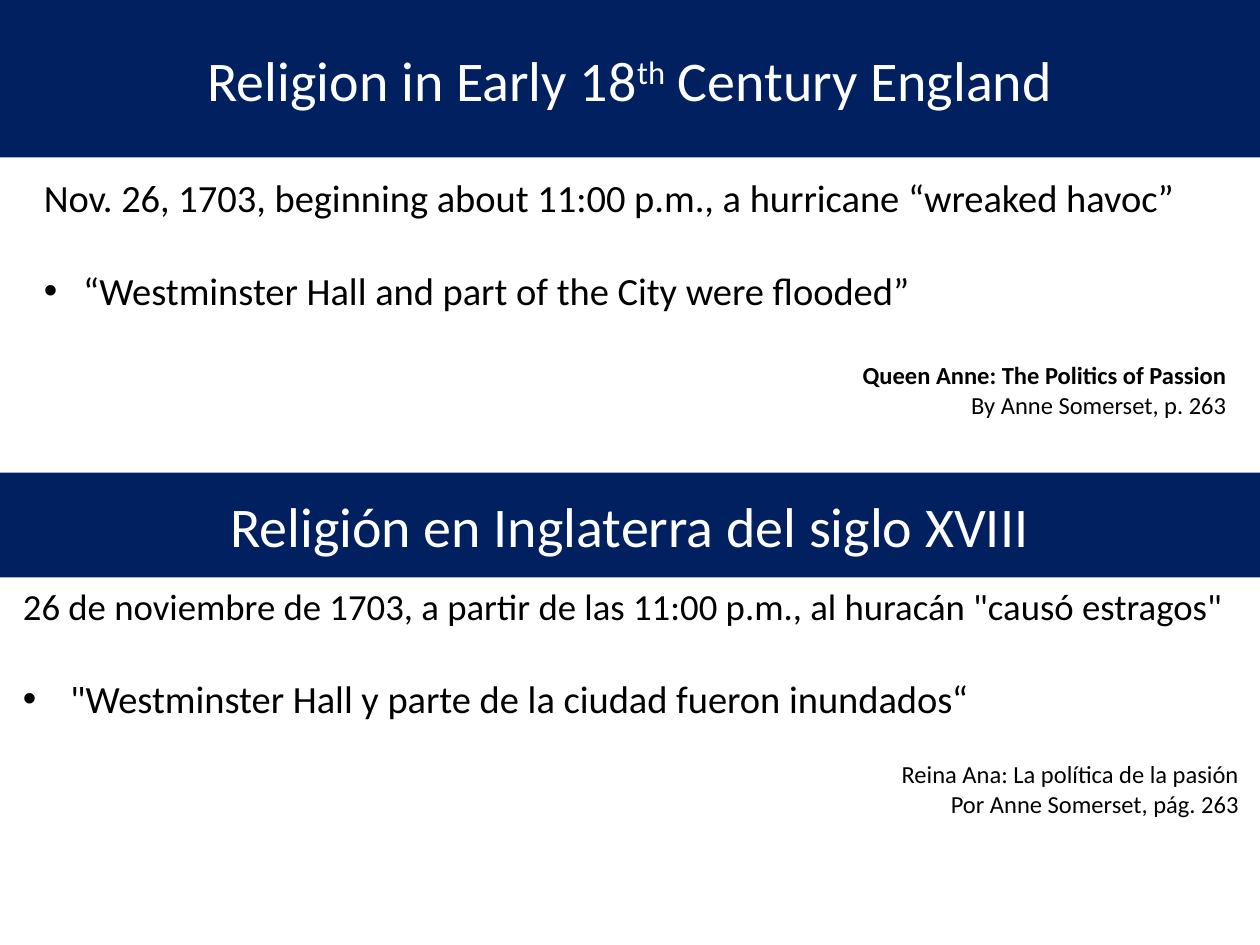
from lxml import etree
from pptx import Presentation
from pptx.dml.color import RGBColor
from pptx.enum.shapes import MSO_SHAPE
from pptx.enum.text import MSO_ANCHOR, MSO_AUTO_SIZE, PP_ALIGN
from pptx.oxml.ns import qn
from pptx.util import Pt

RECTANGLE = MSO_SHAPE.RECTANGLE
MIDDLE = MSO_ANCHOR.MIDDLE
NO_AUTOFIT = MSO_AUTO_SIZE.NONE
LEFT, CENTER, RIGHT = PP_ALIGN.LEFT, PP_ALIGN.CENTER, PP_ALIGN.RIGHT

# Content: spans are (text, raised); bands are (left, top, width, height)
PAGE_WIDTH, PAGE_HEIGHT = 720, 540
NAVY, WHITE, BLACK = "002060", "FFFFFF", "000000"
FONT = "Calibri"

ENGLISH_TITLE = [("Religion in Early 18", False), ("th", True),
                 (" Century England", False)]
SPANISH_TITLE = [("Religión en Inglaterra del siglo XVIII", False)]
ENGLISH_BAND = (0, 0, PAGE_WIDTH, 90)
SPANISH_BAND = (0, 270, PAGE_WIDTH, 60)

# Paragraphs: text, size, bold, align, space before, bullet indent
BODIES = [
    {"area": (18, 96, 690, 150), "right_inset": 7.2, "paragraphs": [
        ("Nov. 26, 1703, beginning about 11:00 p.m., a hurricane “wreaked havoc”",
         22, False, LEFT, 0, 0),
        ("“Westminster Hall and part of the City were flooded”",
         22, False, LEFT, 26.8, 22.5),
        ("Queen Anne: The Politics of Passion", 14, True, RIGHT, 26.8, 0),
        ("By Anne Somerset, p. 263", 14, False, RIGHT, 0, 0)]},
    {"area": (6, 330, 702, 142), "right_inset": 0, "paragraphs": [
        ('26 de noviembre de 1703, a partir de las 11:00 p.m., al huracán "causó estragos"',
         21, False, LEFT, 0, 0),
        ('"Westminster Hall y parte de la ciudad fueron inundados“',
         22, False, LEFT, 26.8, 27),
        ("Reina Ana: La política de la pasión", 14, False, RIGHT, 22, 0),
        ("Por Anne Somerset, pág. 263", 14, False, RIGHT, 0, 0)]},
]


def color(hex_string):
    return RGBColor.from_string(hex_string)


def style_span(span, size, hex_string, bold=False):
    span.font.name = FONT
    span.font.size = Pt(size)
    span.font.bold = bold
    span.font.color.rgb = color(hex_string)


def place(shape, area):
    shape.left, shape.top, shape.width, shape.height = map(Pt, area)


def format_band(shape, spans):
    shape.fill.solid()
    shape.fill.fore_color.rgb = color(NAVY)
    shape.line.fill.background()
    frame = shape.text_frame
    frame.auto_size = NO_AUTOFIT
    frame.word_wrap = True
    frame.vertical_anchor = MIDDLE
    para = frame.paragraphs[0]
    para.alignment = CENTER
    for text, raised in spans:
        span = para.add_run()
        span.text = text
        style_span(span, 32, WHITE)
        if raised:
            span.font._element.set("baseline", "30000")


def add_bullet(para, indent):
    properties = para._p.get_or_add_pPr()
    properties.set("marL", str(Pt(indent)))
    properties.set("indent", str(-Pt(indent)))
    etree.SubElement(properties, qn("a:buFont")).set("typeface", "Arial")
    etree.SubElement(properties, qn("a:buChar")).set("char", "•")


def add_body(page, area, right_inset, paragraphs):
    box = page.shapes.add_textbox(*map(Pt, area))
    frame = box.text_frame
    frame.word_wrap = True
    frame.margin_right = Pt(right_inset)
    frame.text = "\n".join(row[0] for row in paragraphs)
    for para, row in zip(frame.paragraphs, paragraphs):
        _, size, bold, align, gap, indent = row
        para.alignment = align
        para.space_before = Pt(gap)
        if indent:
            add_bullet(para, indent)
        style_span(para.runs[0], size, BLACK, bold)


def main():
    deck = Presentation()
    deck.slide_width, deck.slide_height = Pt(PAGE_WIDTH), Pt(PAGE_HEIGHT)
    page = deck.slides.add_slide(deck.slide_layouts.get_by_name("Title Only"))

    # Title bands
    title = page.shapes.title
    place(title, ENGLISH_BAND)
    format_band(title, ENGLISH_TITLE)
    band = page.shapes.add_shape(RECTANGLE, *map(Pt, SPANISH_BAND))
    band.shadow.inherit = False
    format_band(band, SPANISH_TITLE)

    # Body text
    for body in BODIES:
        add_body(page, **body)

    deck.save("out.pptx")


if __name__ == "__main__":
    main()
